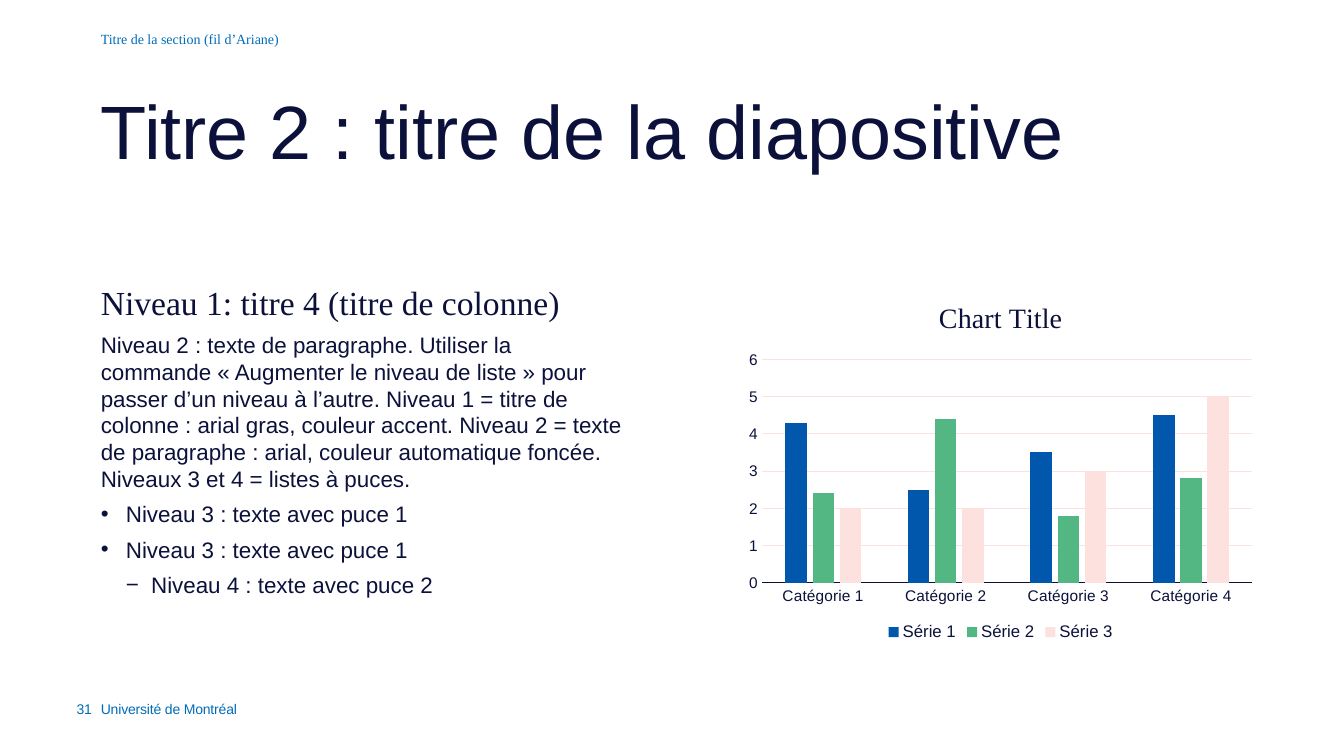
from dataclasses import dataclass

from lxml.etree import SubElement
from pptx import Presentation
from pptx.chart.data import CategoryChartData
from pptx.dml.color import RGBColor
from pptx.enum.chart import XL_CHART_TYPE, XL_LEGEND_POSITION, XL_TICK_MARK
from pptx.enum.text import PP_ALIGN
from pptx.oxml.ns import qn
from pptx.util import Pt


@dataclass(frozen=True)
class Theme:
    ink: str = "0B113A"
    link: str = "006CB7"
    grid: str = "FDE1DE"
    bars: tuple = ("0057AC", "52B782", "FDE1DE")
    sans: str = "Arial"
    serif: str = "Times New Roman"
    small: int = 10
    tick: int = 11
    key: int = 12
    text: int = 16
    name: int = 20
    head: int = 24
    title: int = 54


THEME = Theme()


def style(font, size, face=THEME.sans, color=THEME.ink):
    font.size = Pt(size)
    font.name = face
    font.bold = False
    font.color.rgb = RGBColor.from_string(color)


def add_frame(slide, box):
    frame = slide.shapes.add_textbox(*map(Pt, box)).text_frame
    frame.word_wrap = True
    frame.margin_left = frame.margin_right = 0
    frame.margin_top = frame.margin_bottom = 0
    return frame


def add_line(slide, box, text, size, face=THEME.sans, color=THEME.ink):
    frame = add_frame(slide, box)
    frame.text = text
    line = frame.paragraphs[0]
    style(line.runs[0].font, size, face, color)
    return line


def set_indent(line, left, first=0):
    props = line._p.get_or_add_pPr()
    props.set("marL", str(Pt(left)))
    props.set("indent", str(Pt(first)))
    return props


def set_bullet(line, mark, left):
    props = set_indent(line, left, -18)
    tint = SubElement(props, qn("a:buClr"))
    SubElement(tint, qn("a:srgbClr"), val=THEME.ink)
    SubElement(props, qn("a:buFont"), typeface=THEME.sans)
    SubElement(props, qn("a:buChar"), char=mark)


def add_body(slide, box, items):
    frame = add_frame(slide, box)
    frame.text = "\n".join(text for level, text in items)
    marks = {2: ("•", 18), 3: ("−", 36)}
    for line, (level, text) in zip(frame.paragraphs, items):
        line.level = level
        line.space_after = Pt(5 if level == 3 else 6)
        if level in marks:
            set_bullet(line, *marks[level])
        else:
            set_indent(line, 0)
        if level:
            style(line.runs[0].font, THEME.text)
        else:
            style(line.runs[0].font, THEME.head, THEME.serif)


def add_graph(slide, box, title, groups, series):
    data = CategoryChartData()
    data.categories = groups
    for name, values in series:
        data.add_series(name, values)
    chart = slide.shapes.add_chart(
        XL_CHART_TYPE.COLUMN_CLUSTERED, *map(Pt, box), data).chart
    style(chart.font, THEME.small)
    chart.has_title = True
    frame = chart.chart_title.text_frame
    frame.text = title
    style(frame.paragraphs[0].runs[0].font, THEME.name, THEME.serif)
    chart.chart_title.include_in_layout = False

    chart.has_legend = True
    chart.legend.position = XL_LEGEND_POSITION.BOTTOM
    chart.legend.include_in_layout = False
    style(chart.legend.font, THEME.key)

    plot = chart.plots[0]
    plot.gap_width = 219
    plot.overlap = -27
    plot.vary_by_categories = False
    for bar, color in zip(plot.series, THEME.bars):
        bar.format.fill.solid()
        bar.format.fill.fore_color.rgb = RGBColor.from_string(color)
        bar.invert_if_negative = False

    base, scale = chart.category_axis, chart.value_axis
    for axis in (base, scale):
        axis.major_tick_mark = axis.minor_tick_mark = XL_TICK_MARK.NONE
        style(axis.tick_labels.font, THEME.tick)
    scale.minimum_scale, scale.maximum_scale, scale.major_unit = 0, 6, 1
    scale.has_major_gridlines = True
    scale.format.line.fill.background()
    rules = ((base.format.line, THEME.ink),
             (scale.major_gridlines.format.line, THEME.grid))
    for rule, color in rules:
        rule.width = Pt(0.75)
        rule.color.rgb = RGBColor.from_string(color)


def add_header(slide, box, crumb, title):
    left, top, width, height = box
    add_line(slide, (left, top, 348.5, 32.4), crumb,
             THEME.small, THEME.serif, THEME.link)
    line = add_line(slide, (left, top + 46, width, height - 46), title,
                    THEME.title)
    line.line_spacing = 0.9


def add_footer(slide, box, page, owner):
    left, top, width, height = box
    name = add_line(slide, (left + 36, top, width - 36, height), owner,
                    THEME.small, color=THEME.link)
    count = add_line(slide, (left, top, 32.4, height), page,
                     THEME.small, color=THEME.link)
    count.alignment = PP_ALIGN.CENTER
    set_indent(count, 16)
    for line in (name, count):
        line.runs[0]._r.get_or_add_rPr().set("spc", "-10")


def main():
    deck = Presentation()
    deck.slide_width, deck.slide_height = Pt(960), Pt(540)
    slide = deck.slides.add_slide(deck.slide_layouts[6])
    add_header(slide, (72, 21.6, 828, 111.6),
               "Titre de la section (fil d’Ariane)",
               "Titre 2 : titre de la diapositive")
    add_body(slide, (72, 201.6, 374.4, 259.2), (
        (0, "Niveau 1: titre 4 (titre de colonne)"),
        (1, "Niveau 2 : texte de paragraphe. Utiliser la commande "
            "« Augmenter le niveau de liste » pour passer d’un niveau "
            "à l’autre. Niveau 1 = titre de colonne : arial gras, couleur "
            "accent. Niveau 2 = texte de paragraphe : arial, couleur "
            "automatique foncée. Niveaux 3 et 4 = listes à puces."),
        (2, "Niveau 3 : texte avec puce 1"),
        (2, "Niveau 3 : texte avec puce 1"),
        (3, "Niveau 4 : texte avec puce 2"),
    ))
    add_graph(slide, (527.6, 201.6, 374.4, 259.2), "Chart Title",
              [f"Catégorie {n}" for n in range(1, 5)],
              (("Série 1", (4.3, 2.5, 3.5, 4.5)),
               ("Série 2", (2.4, 4.4, 1.8, 2.8)),
               ("Série 3", (2, 2, 3, 5))))
    add_footer(slide, (36, 500.4, 603.4, 28.8), "31", "Université de Montréal")
    deck.save("out.pptx")


if __name__ == "__main__":
    main()
